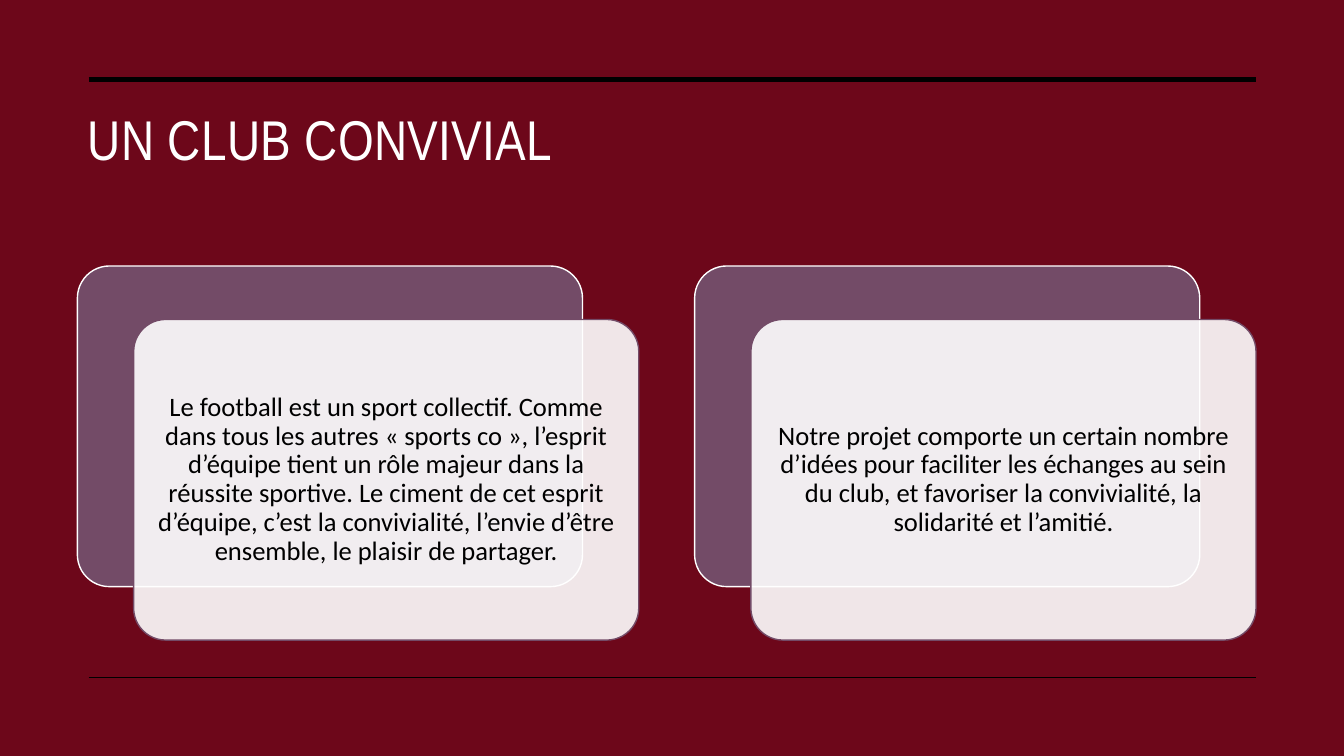
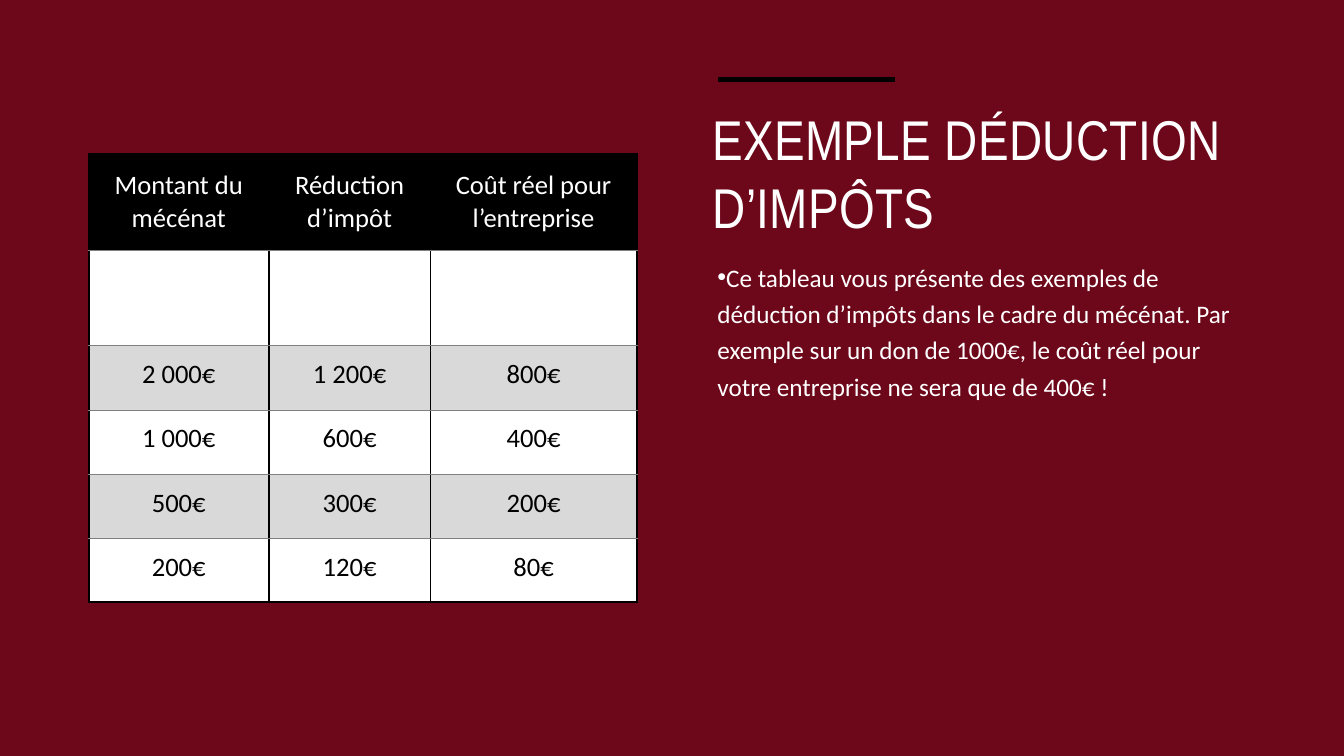
from pptx import Presentation
from pptx.dml.color import RGBColor
from pptx.enum.shapes import MSO_CONNECTOR as Connector, MSO_SHAPE as Shape
from pptx.enum.text import MSO_ANCHOR as Anchor, MSO_AUTO_SIZE as AutoSize, PP_ALIGN as Align
from pptx.oxml.ns import qn
from pptx.util import Pt
from lxml.etree import SubElement


def color(hex_code):
    return RGBColor.from_string(hex_code)


def apply(target, values):
    for name, value in values.items():
        setattr(target, name, value)


class Deck:
    BURGUNDY, PLUM = "6D071A", "734B67"
    WHITE, BLACK = "FFFFFF", "000000"
    GREY, BAND = "808080", "D9D9D9"
    TITLE = {"name": "Arial Narrow", "size": Pt(40)}
    CELL = {"name": "Calibri", "size": Pt(19)}
    BODY = {"name": "Calibri", "size": Pt(18)}
    LEFT, RIGHT, TOP, BOTTOM = 63.4, 897.1, 56.9, 483.8
    CARD_SIZE = (360.8, 229)
    CARD_SHIFT = (40.2, 38.2)

    def __init__(self):
        self.prs = Presentation()
        apply(self.prs, {"slide_width": Pt(960), "slide_height": Pt(540)})
        backdrop = self.prs.slide_master.background.fill
        backdrop.solid()
        backdrop.fore_color.rgb = color(self.BURGUNDY)
        self.slide = None

    def set_text(self, frame, text, font, ink, frame_format, paragraph_format):
        apply(frame, {"word_wrap": True, **frame_format})
        paragraph = frame.paragraphs[0]
        apply(paragraph, paragraph_format)
        run = paragraph.add_run()
        run.text = text
        apply(run.font, font)
        run.font.color.rgb = color(ink)
        return paragraph

    def add_slide(self, title, left, top, width, height):
        self.slide = self.prs.slides.add_slide(self.prs.slide_layouts[5])
        heading = self.slide.shapes.title
        apply(heading, {"left": Pt(left), "top": Pt(top),
                        "width": Pt(width), "height": Pt(height)})
        paragraph = self.set_text(
            heading.text_frame, title, self.TITLE, self.WHITE,
            {"auto_size": AutoSize.NONE, "vertical_anchor": Anchor.TOP},
            {"alignment": Align.LEFT})
        paragraph.runs[0]._r.get_or_add_rPr().set("spc", "30")

    def rule(self, start, end, y, weight):
        line = self.slide.shapes.add_connector(
            Connector.STRAIGHT, Pt(start), Pt(y), Pt(end), Pt(y))
        line.line.color.rgb = color(self.BLACK)
        line.line.width = Pt(weight)
        SubElement(line._element.spPr, qn("a:effectLst"))

    def panel(self, left, top, fill, outline):
        panel = self.slide.shapes.add_shape(
            Shape.ROUNDED_RECTANGLE, Pt(left), Pt(top), *map(Pt, self.CARD_SIZE))
        panel.shadow.inherit = False
        panel.adjustments[0] = 0.1
        panel.fill.solid()
        panel.fill.fore_color.rgb = color(fill)
        panel.line.color.rgb = color(outline)
        panel.line.width = Pt(1)
        return panel

    def card(self, left, top, text):
        self.panel(left, top, self.PLUM, self.WHITE)
        shift_x, shift_y = self.CARD_SHIFT
        front = self.panel(left + shift_x, top + shift_y, self.WHITE, self.PLUM)
        white = front._element.spPr.find(qn("a:solidFill")).find(qn("a:srgbClr"))
        SubElement(white, qn("a:alpha"), val="90000")
        margins = {f"margin_{side}": Pt(5.7) for side in ("left", "top", "right", "bottom")}
        self.set_text(front.text_frame, text, self.CELL, self.BLACK,
                      {"vertical_anchor": Anchor.MIDDLE, **margins},
                      {"alignment": Align.CENTER, "line_spacing": 0.9})

    def bullet(self, left, top, width, height, text):
        box = self.slide.shapes.add_textbox(Pt(left), Pt(top), Pt(width), Pt(height))
        paragraph = self.set_text(box.text_frame, text, self.BODY, self.WHITE, {},
                                  {"line_spacing": 1.2, "space_after": Pt(6)})
        properties = paragraph._p.get_or_add_pPr()
        properties.set("marL", "0")
        properties.set("indent", str(-Pt(18)))
        SubElement(properties, qn("a:buFont"), typeface="Arial")
        SubElement(properties, qn("a:buChar"), char="•")

    def border(self, cell, side, ink, weight):
        line = SubElement(cell._tc.get_or_add_tcPr(), qn(f"a:ln{side}"), w=str(Pt(weight)))
        SubElement(SubElement(line, qn("a:solidFill")), qn("a:srgbClr"), val=ink)

    def table(self, left, top, widths, heights, rows):
        grid = self.slide.shapes.add_table(
            len(rows), len(widths), Pt(left), Pt(top),
            Pt(sum(widths)), Pt(sum(heights))).table
        apply(grid, {"first_row": False, "horz_banding": False})
        for column, width in zip(grid.columns, widths):
            column.width = Pt(width)
        thick, thin = (self.BLACK, 1.5), (self.GREY, 0.5)
        last = len(rows) - 1
        for index, (row, height, texts) in enumerate(zip(grid.rows, heights, rows)):
            row.height = Pt(height)
            header = index == 0
            fill = self.BLACK if header else self.WHITE if index % 2 else self.BAND
            borders = {"L": thick, "R": thick,
                       "T": thick if header else thin,
                       "B": thick if index == last else thin}
            for cell, text in zip(row.cells, texts):
                apply(cell, {"margin_left": Pt(12.4), "margin_right": Pt(12.8),
                             "margin_top": Pt(9.2), "margin_bottom": Pt(9.2),
                             "vertical_anchor": Anchor.MIDDLE if header else Anchor.TOP})
                for side, stroke in borders.items():
                    self.border(cell, side, *stroke)
                cell.fill.solid()
                cell.fill.fore_color.rgb = color(fill)
                if text:
                    self.set_text(cell.text_frame, text, self.CELL,
                                  self.WHITE if header else self.BLACK,
                                  {}, {"alignment": Align.CENTER})


CLUB_VALUES = [
    "Le football est un sport collectif. Comme dans tous les autres « sports co », "
    "l’esprit d’équipe tient un rôle majeur dans la réussite sportive. Le ciment de cet "
    "esprit d’équipe, c’est la convivialité, l’envie d’être ensemble, le plaisir de partager.",
    "Notre projet comporte un certain nombre d’idées pour faciliter les échanges au sein "
    "du club, et favoriser la convivialité, la solidarité et l’amitié.",
]
DEDUCTIONS = [
    ("Montant du mécénat", "Réduction d’impôt", "Coût réel pour l’entreprise"),
    ("", "", ""),
    ("2 000€", "1 200€", "800€"),
    ("1 000€", "600€", "400€"),
    ("500€", "300€", "200€"),
    ("200€", "120€", "80€"),
]


def main():
    deck = Deck()

    deck.add_slide("UN CLUB CONVIVIAL", 55.4, 71.3, 841.7, 90.7)
    deck.rule(deck.LEFT, deck.RIGHT, deck.TOP, 3.5)
    deck.rule(deck.LEFT, deck.RIGHT, deck.BOTTOM, 1)
    for position, value in enumerate(CLUB_VALUES):
        deck.card(55.3 + position * 440.9, 190, value)

    deck.add_slide("EXEMPLE DÉDUCTION D’IMPÔTS", 501.8, 71.3, 394.6, 103.7)
    deck.rule(512.6, 639.4, deck.TOP, 3.5)
    deck.bullet(505.4, 179.3, 394.6, 306,
                "Ce tableau vous présente des exemples de déduction d’impôts dans le cadre "
                "du mécénat. Par exemple sur un don de 1000€, le coût réel pour votre "
                "entreprise ne sera que de 400€ !")
    deck.table(deck.LEFT, 110, [128.9, 115.2, 147.6], [68.5] * 2 + [45.8] * 4, DEDUCTIONS)

    deck.prs.save("out.pptx")


if __name__ == "__main__":
    main()
